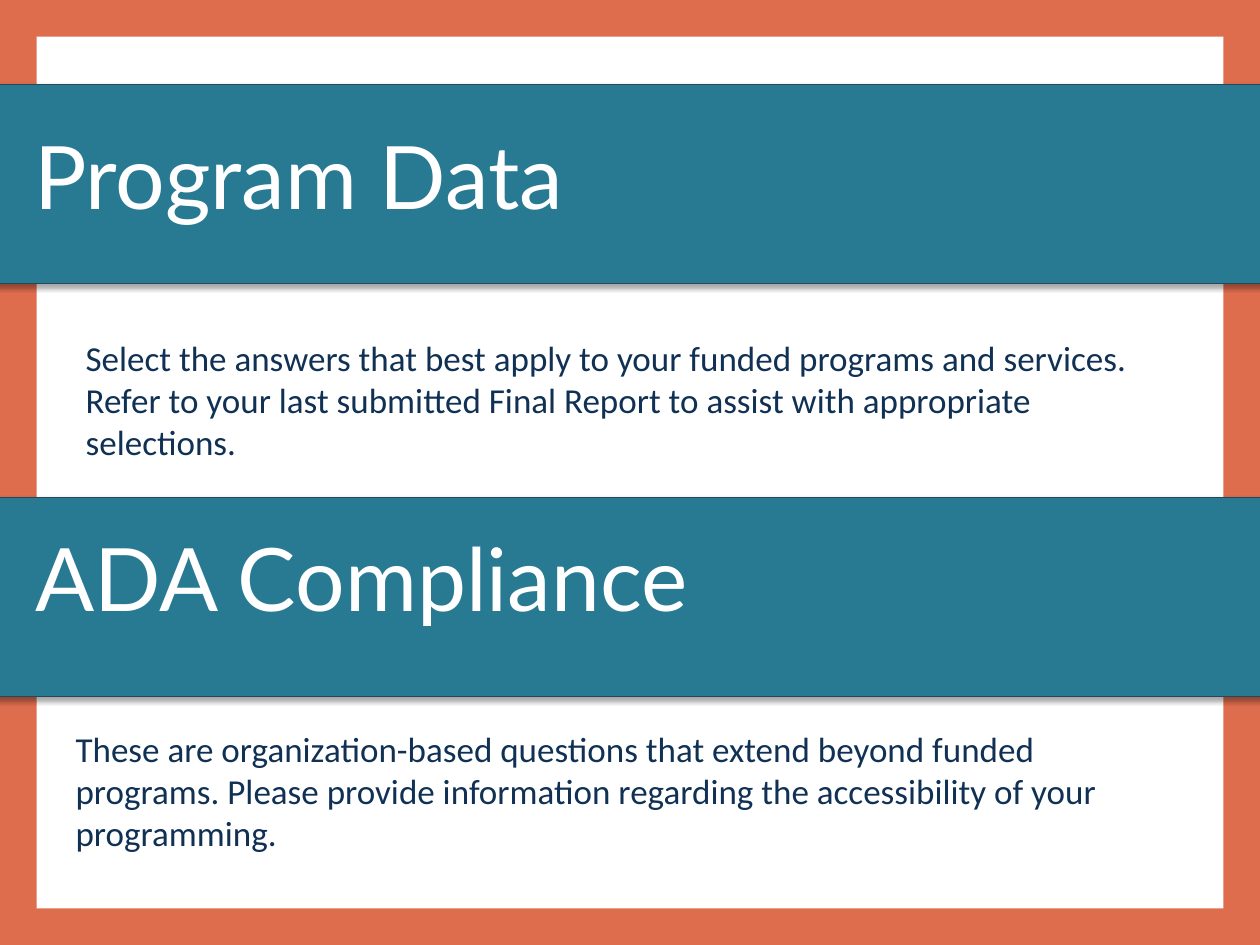
from lxml.etree import SubElement
from pptx import Presentation
from pptx.dml.color import RGBColor
from pptx.enum.shapes import MSO_SHAPE
from pptx.enum.text import MSO_ANCHOR, MSO_AUTO_SIZE, PP_ALIGN
from pptx.oxml.ns import qn
from pptx.util import Inches, Pt

COLORS = {"frame": "DE6D4E", "panel": "FFFFFF", "band": "287A93",
          "band_edge": "264859", "heading": "FFFFFF", "body": "103154",
          "shadow": "000000"}

# Each section: heading, body, then band, heading and body boxes in inches
SECTIONS = [
    {"heading": "Program Data",
     "body": "Select the answers that best apply to your funded programs and "
             "services. Refer to your last submitted Final Report to assist "
             "with appropriate selections.",
     "band_at": (-0.08, 0.67), "heading_at": (0.17, 0.92),
     "body_box": (0.58, 2.62, 8.83, 2.05)},
    {"heading": "ADA Compliance",
     "body": "These are organization-based questions that extend beyond funded "
             "programs. Please provide information regarding the accessibility "
             "of your programming.",
     "band_at": (-0.07, 3.95), "heading_at": (0.18, 4.11),
     "body_box": (0.5, 5.72, 8.83, 1.78)},
]
WIDTH, HEIGHT, MARGIN = 10, 7.5, 0.29
BAND_SIZE = (10.17, 1.58)
HEADING_SIZE = (7.43, 0.94)


def color(role):
    return RGBColor.from_string(COLORS[role])


def add_block(slide, box, role):
    block = slide.shapes.add_shape(MSO_SHAPE.RECTANGLE, *map(Inches, box))
    block.shadow.inherit = False
    block.fill.solid()
    block.fill.fore_color.rgb = color(role)
    block.line.fill.background()
    return block


def add_band(slide, box):
    band = add_block(slide, box, "band")
    band.line.color.rgb = color("band_edge")
    band.line.width = Pt(0.75)
    # Soft shadow straight below the band
    effects = band._element.spPr.find(qn("a:effectLst"))
    shadow = SubElement(effects, qn("a:outerShdw"), blurRad=str(Pt(3.1)),
                        dist=str(Pt(1.8)), dir="5400000", rotWithShape="0")
    tint = SubElement(shadow, qn("a:srgbClr"), val=COLORS["shadow"])
    SubElement(tint, qn("a:alpha"), val="35000")


def write(holder, box, text, font_name, size, role):
    holder.left, holder.top, holder.width, holder.height = map(Inches, box)
    frame = holder.text_frame
    frame.text = text
    frame.word_wrap = True
    frame.auto_size = MSO_AUTO_SIZE.NONE
    frame.vertical_anchor = MSO_ANCHOR.TOP
    paragraph = frame.paragraphs[0]
    paragraph.alignment = PP_ALIGN.LEFT
    paragraph.space_before = Pt(0)
    properties = paragraph._p.get_or_add_pPr()
    properties.set("marL", "0")
    properties.set("indent", "0")
    SubElement(properties, qn("a:buNone"))
    font = paragraph.runs[0].font
    font.name, font.size, font.color.rgb = font_name, Pt(size), color(role)


def main():
    deck = Presentation()
    deck.slide_width, deck.slide_height = Inches(WIDTH), Inches(HEIGHT)
    slide = deck.slides.add_slide(deck.slide_layouts.get_by_name("Two Content"))
    title, *bodies = list(slide.placeholders)[:3]

    # Coloured frame around a white panel
    slide.background.fill.solid()
    slide.background.fill.fore_color.rgb = color("frame")
    add_block(slide, (MARGIN, MARGIN, WIDTH - 2 * MARGIN, HEIGHT - 2 * MARGIN),
              "panel")

    # Bands with their headings and body text on top
    headings = [title, None]
    for section, heading, body in zip(SECTIONS, headings, bodies):
        add_band(slide, section["band_at"] + BAND_SIZE)
        heading = heading or slide.shapes.add_textbox(0, 0, 0, 0)
        write(heading, section["heading_at"] + HEADING_SIZE,
              section["heading"], "Lato", 50, "heading")
        write(body, section["body_box"], section["body"], "Calibri", 20, "body")
        for part in (heading, body):
            slide.shapes._spTree.append(part._element)

    deck.save("out.pptx")


if __name__ == "__main__":
    main()
